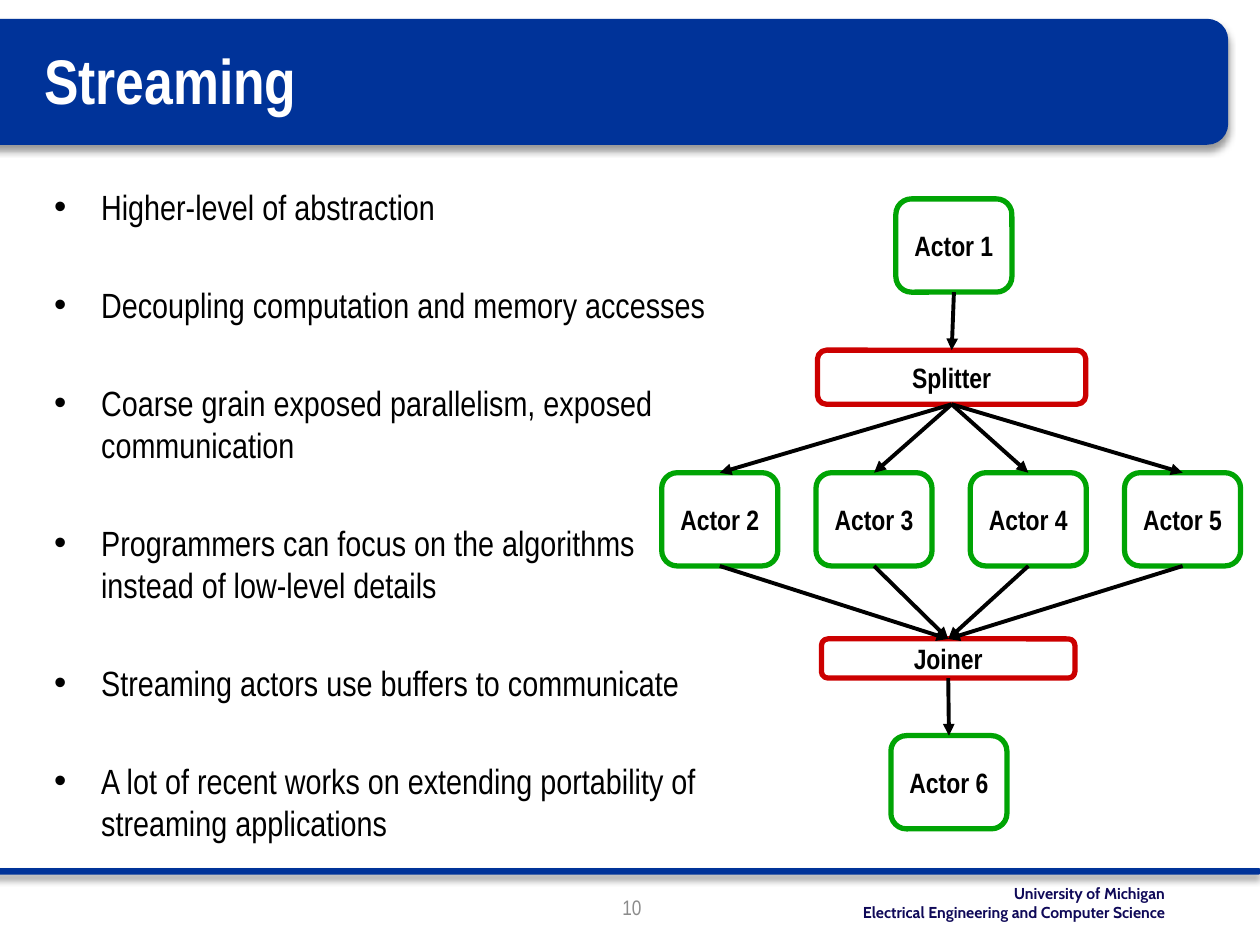
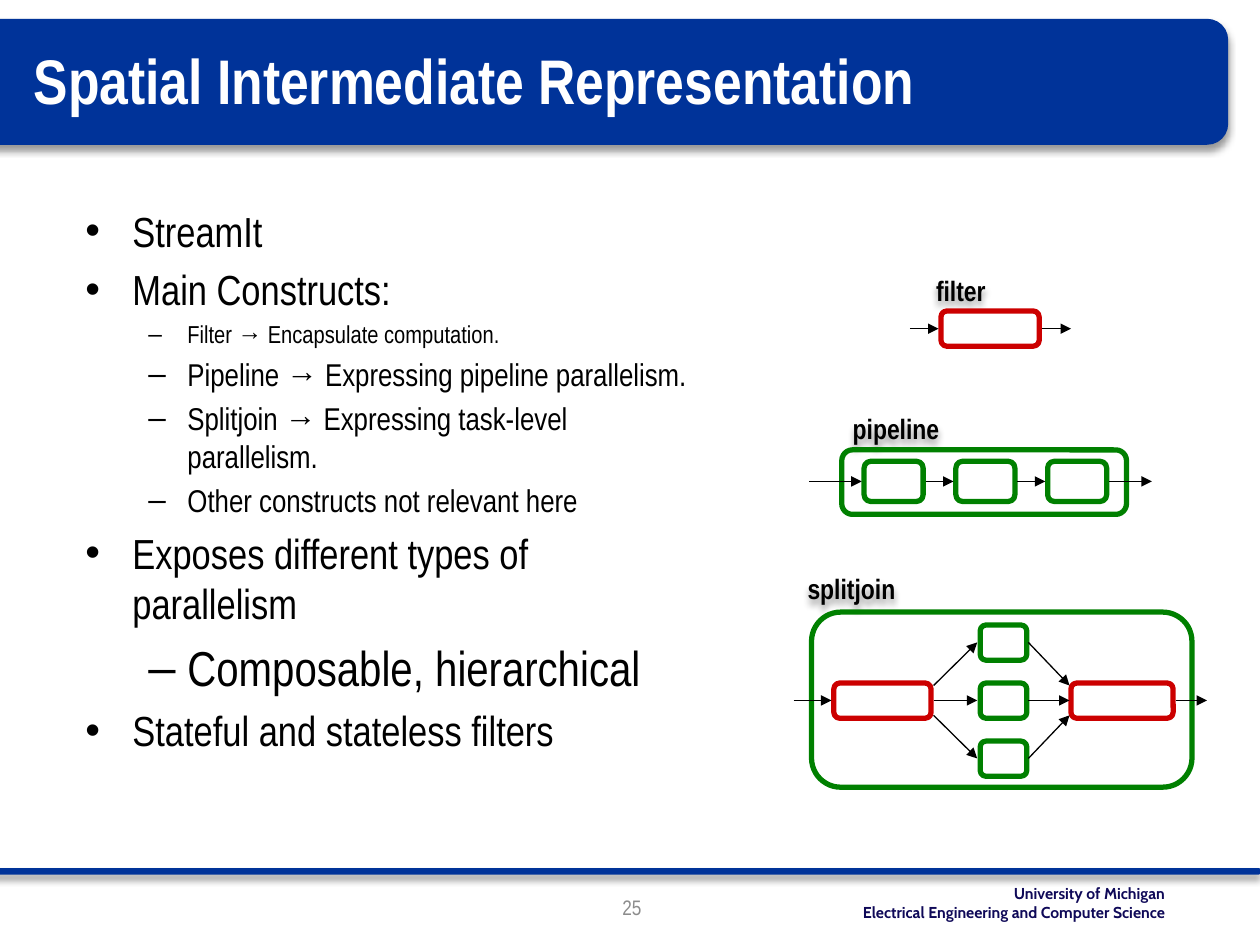
from pptx import Presentation, util as u
from pptx.dml.color import RGBColor
from pptx.enum import shapes, text
from pptx.oxml import parse_xml
from pptx.oxml.ns import nsdecls

NAVY = RGBColor(0x00, 0x33, 0x99)
INK = RGBColor(0x0F, 0x09, 0x58)
GREY = RGBColor(0x8C, 0x8C, 0x8C)
LIME = RGBColor(0x00, 0xA4, 0x04)
GREEN = RGBColor(0x00, 0x80, 0x00)
RED = RGBColor(0xCC, 0x00, 0x00)
BLACK = RGBColor(0, 0, 0)
WHITE = RGBColor(255, 255, 255)
FONT = "Arial Narrow"
ROUND = shapes.MSO_SHAPE.ROUNDED_RECTANGLE
ALT = shapes.MSO_SHAPE.FLOWCHART_ALTERNATE_PROCESS
LEFT, MID, RIGHT = text.PP_ALIGN.LEFT, text.PP_ALIGN.CENTER, text.PP_ALIGN.RIGHT
TOP, BOTTOM = 0, 2

BANDS = [(-0.64, 0.38, 25.4, 2.54), (-0.43, 17.5, 25.83, 0.13)]
SCHOOL = ["University of Michigan", "Electrical Engineering and Computer Science"]

STREAM = [
    "Higher-level of abstraction",
    "Decoupling computation and memory accesses",
    "Coarse grain exposed parallelism, exposed communication",
    "Programmers can focus on the algorithms instead of low-level details",
    "Streaming actors use buffers to communicate",
    "A lot of recent works on extending portability of streaming applications",
]
SPATIAL = [
    (0, 24, "StreamIt"),
    (0, 24, "Main Constructs:"),
    (1, 14, "Filter → Encapsulate computation."),
    (1, 18, "Pipeline → Expressing pipeline parallelism."),
    (1, 18, "Splitjoin → Expressing task-level parallelism."),
    (1, 18, "Other constructs not relevant here"),
    (0, 24, "Exposes different types of parallelism"),
    (1, 28, "Composable, hierarchical"),
    (0, 24, "Stateful and stateless filters"),
]
ACTOR = (2.34, 1.88)
NODES = {
    "Actor 1": (LIME, 18.06, 4.01, *ACTOR),
    "Splitter": (RED, 16.48, 7.06, 5.41, 1.09),
    **{f"Actor {i + 2}": (LIME, 13.34 + 3.11 * i, 9.53, *ACTOR) for i in range(4)},
    "Joiner": (RED, 16.56, 12.88, 5.11, 0.79),
    "Actor 6": (LIME, 17.96, 14.83, *ACTOR),
}
FORKS = [f"Actor {i}" for i in range(2, 6)]
LINKS = [
    ("Actor 1", "Splitter"),
    *[("Splitter", name) for name in FORKS],
    *[(name, "Joiner") for name in FORKS],
    ("Joiner", "Actor 6"),
]
LABELS = [
    ("filter", 18.62, 5.38, 1.75),
    ("pipeline", 16.94, 8.18, 2.64),
    ("splitjoin", 16.03, 11.4, 2.69),
]
GAP = 0.05


def cm(*vals):
    return [u.Cm(v) for v in vals]


def style(para, size, color, bold=False, align=LEFT, font=FONT):
    para.alignment = align
    for run in para.runs:
        run.font.name, run.font.size, run.font.bold = font, u.Pt(size), bold
        run.font.color.rgb = color


def shade(shape):
    shape.shadow.inherit = False
    shape._element.spPr.find("{*}effectLst").append(parse_xml(
        f'<a:outerShdw {nsdecls("a")} blurRad="{u.Pt(4)}" dist="{u.Pt(3)}" '
        'dir="5400000" algn="ctr" rotWithShape="0"><a:srgbClr val="000000">'
        '<a:alpha val="40000"/></a:srgbClr></a:outerShdw>'))


def write(slide, at, lines, *look, anchor=text.MSO_ANCHOR.TOP, **more):
    box = slide.shapes.add_textbox(*cm(*at))
    frame = box.text_frame
    frame.word_wrap = True
    frame.vertical_anchor = anchor
    frame.text = "\n".join(lines)
    for para in frame.paragraphs:
        style(para, *look, **more)
    return box


def frame(deck, title, left, page):
    slide = deck.slides.add_slide(deck.slide_layouts[6])
    for at in BANDS:
        band = slide.shapes.add_shape(ROUND, *cm(*at))
        band.fill.solid()
        band.fill.fore_color.rgb = NAVY
        band.line.fill.background()
        shade(band)
    middle = text.MSO_ANCHOR.MIDDLE
    write(slide, (16.31, 17.7, 7.42, 1.02), SCHOOL, 9, INK, True, RIGHT, font="Cabin")
    write(slide, (9.78, 17.78, 5.92, 1.02), [page], 12, GREY, False, MID, anchor=middle)
    write(slide, (left, 0, 23.5, 3.18), [title], 36, WHITE, True, anchor=middle)
    return slide


def listing(slide, at, items):
    box = write(slide, at, [item[2] for item in items], 20, BLACK)
    for i, (para, (level, size, _, space)) in enumerate(zip(box.text_frame.paragraphs, items)):
        props = para._p.get_or_add_pPr()
        indent, hang, mark = [(0.95, 0.95, "•"), (2.06, 0.79, "–")][level]
        props.set("marL", str(u.Cm(indent)))
        props.set("indent", str(-u.Cm(hang)))
        props.append(parse_xml(f'<a:buFont {nsdecls("a")} typeface="Arial"/>'))
        props.append(parse_xml(f'<a:buChar {nsdecls("a")} char="{mark}"/>'))
        para.level = level
        para.space_before = u.Pt(space if i else 0)
        style(para, size, BLACK)


def block(slide, kind, color, *at, name=""):
    box = slide.shapes.add_shape(kind, *cm(*at))
    box.shadow.inherit = False
    box.fill.background()
    box.line.color.rgb, box.line.width = color, u.Pt(3)
    if name:
        body = box.text_frame
        body.word_wrap = False
        body.margin_top = body.margin_bottom = 0
        body.vertical_anchor = text.MSO_ANCHOR.MIDDLE
        body.text = name
        style(body.paragraphs[0], 16, BLACK, True, MID)
    return box


def arrow(slide, x1, y1, x2, y2, width=0.75):
    line = slide.shapes.add_connector(shapes.MSO_CONNECTOR.STRAIGHT, *cm(x1, y1, x2, y2))
    line.line.color.rgb, line.line.width = BLACK, u.Pt(width)
    line.line._get_or_add_ln().append(parse_xml(f'<a:tailEnd {nsdecls("a")} type="triangle"/>'))
    line._element.spPr.append(parse_xml(f'<a:effectLst {nsdecls("a")}/>'))
    return line


def chain(slide, color, start, stop, boxes):
    for at in boxes:
        block(slide, ALT, color, *at)
    y = boxes[0][1] + boxes[0][3] / 2
    tails = [start] + [x + w + GAP for x, _, w, _ in boxes]
    heads = [x - GAP for x, *_ in boxes] + [stop]
    for tail, head in zip(tails, heads):
        arrow(slide, tail, y, head, y)


def streaming(deck):
    slide = frame(deck, "Streaming", 0.64, "10")
    listing(slide, (0.84, 3.61, 13.77, 12.27), [(0, 20, line, 32) for line in STREAM])
    nodes = {name: block(slide, ROUND, *spot, name=name) for name, spot in NODES.items()}
    for tail, head in LINKS:
        line = arrow(slide, 0, 0, 1, 1, 2.25)
        line.begin_connect(nodes[tail], BOTTOM)
        line.end_connect(nodes[head], TOP)


def spatial(deck):
    slide = frame(deck, "Spatial Intermediate Representation", 0.43, "25")
    listing(slide, (1.47, 4.01, 12.9, 12.5), [(*item, item[1] * 0.2) for item in SPATIAL])
    for name, x, y, w in LABELS:
        shade(write(slide, (x, y, w, 0.94), [name], 16, BLACK, True))

    chain(slide, RED, 18.34, 21.59, [(18.97, 6.27, 1.98, 0.71)])

    block(slide, ALT, GREEN, 16.97, 9.07, 5.74, 1.3)
    chain(slide, GREEN, 16.31, 23.22, [(17.42 + 1.85 * i, 9.3, 1.19, 0.81) for i in range(3)])

    block(slide, ALT, GREEN, 16.36, 12.34, 7.67, 3.53)
    block(slide, ALT, RED, 16.81, 13.77, 1.96, 0.71)
    block(slide, ALT, RED, 21.59, 13.77, 2.06, 0.71)
    mid = 14.12
    arrow(slide, 16, mid, 16.76, mid)
    arrow(slide, 23.7, mid, 24.33, mid)
    for i in (-1, 0, 1):
        port, row = mid + 0.3 * i, mid + 1.17 * i
        block(slide, ALT, GREEN, 19.76, row - 0.35, 0.94, 0.71)
        arrow(slide, 18.82, port, 19.7, row)
        arrow(slide, 20.73, row, 21.56, port)


def main():
    deck = Presentation()
    deck.slide_width, deck.slide_height = cm(25.4, 19.05)
    streaming(deck)
    spatial(deck)
    deck.save("out.pptx")


if __name__ == "__main__":
    main()
